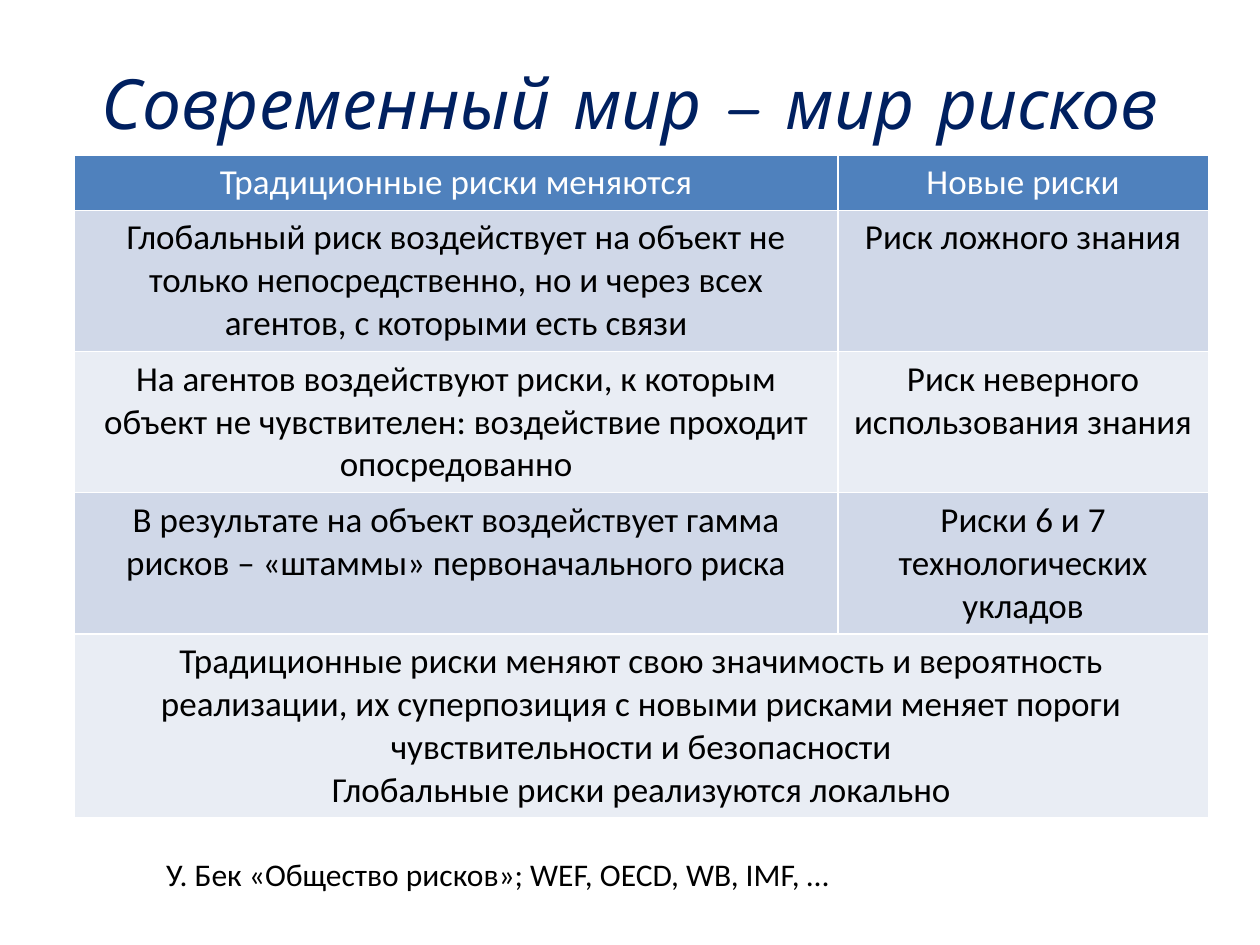
from pptx import Presentation
from pptx import util as u
from pptx.dml import color
from pptx.enum import text

NAVY = color.RGBColor(0x00, 0x20, 0x60)
BLUE = color.RGBColor(0x4F, 0x81, 0xBD)
DARK = color.RGBColor(0xD0, 0xD8, 0xE8)
PALE = color.RGBColor(0xE9, 0xED, 0xF4)
WHITE = color.RGBColor(0xFF, 0xFF, 0xFF)
BLACK = color.RGBColor(0x00, 0x00, 0x00)

TITLE = dict(name="Comic Neue", size=u.Pt(39.6), italic=True)
CELL = dict(name="Calibri", size=u.Pt(20), bold=False)
NOTE = dict(name="Calibri", size=u.Pt(18))

COLS = [15.39, 7.47]
ROWS = [1.07, 2.21, 2.21, 2.21, 2.9]
RISKS = [
    ["Традиционные риски меняются", "Новые риски"],
    ["Глобальный риск воздействует на объект не только непосредственно, "
     "но и через всех агентов, с которыми есть связи",
     "Риск ложного знания"],
    ["На агентов воздействуют риски, к которым объект не чувствителен: "
     "воздействие проходит опосредованно",
     "Риск неверного использования знания"],
    ["В результате на объект воздействует гамма рисков – "
     "«штаммы» первоначального риска",
     "Риски 6 и 7 технологических укладов"],
    ["Традиционные риски меняют свою значимость и вероятность реализации, "
     "их суперпозиция с новыми рисками меняет пороги чувствительности "
     "и безопасности\nГлобальные риски реализуются локально"],
]


class Deck:
    def __init__(self, wide, high):
        self.prs = Presentation()
        self.prs.slide_width, self.prs.slide_height = u.Cm(wide), u.Cm(high)
        self.slide = self.prs.slides.add_slide(self.prs.slide_layouts[5])

    def label(self, frame, words, form, ink, align):
        frame.text = words
        for para in frame.paragraphs:
            para.alignment = align
            for run in para.runs:
                for key, val in form.items():
                    setattr(run.font, key, val)
                run.font.color.rgb = ink

    def title(self, words, box):
        head = self.slide.shapes.title
        for key, val in zip(("left", "top", "width", "height"), box):
            setattr(head, key, u.Cm(val))
        head.text_frame.vertical_anchor = text.MSO_ANCHOR.MIDDLE
        self.label(head.text_frame, words, TITLE, NAVY, text.PP_ALIGN.CENTER)

    def table(self, data, cols, rows, box):
        """Fill a banded table; a row with one text spans all columns."""
        frame = self.slide.shapes.add_table(
            len(rows), len(cols), *map(u.Cm, box))
        grid = frame.table
        for col, wide in zip(grid.columns, cols):
            col.width = u.Cm(wide)
        for row, high in zip(grid.rows, rows):
            row.height = u.Cm(high)
        frame.height = u.Cm(box[3])
        for i, line in enumerate(data):
            fill = BLUE if i == 0 else DARK if i % 2 else PALE
            for cell in grid.rows[i].cells:
                cell.fill.solid()
                cell.fill.fore_color.rgb = fill
            if len(line) < len(cols):
                grid.cell(i, 0).merge(grid.cell(i, len(cols) - 1))
            for j, words in enumerate(line):
                self.label(grid.cell(i, j).text_frame, words, CELL,
                           BLACK if i else WHITE, text.PP_ALIGN.CENTER)

    def note(self, words, box):
        frame = self.slide.shapes.add_textbox(*map(u.Cm, box)).text_frame
        frame.word_wrap = False
        frame.auto_size = text.MSO_AUTO_SIZE.SHAPE_TO_FIT_TEXT
        self.label(frame, words, NOTE, BLACK, text.PP_ALIGN.LEFT)


def main():
    deck = Deck(25.4, 19.05)
    deck.title("Современный мир – мир рисков", (1.27, 0.76, 22.86, 2.57))
    deck.table(RISKS, COLS, ROWS, (1.5, 3.12, sum(COLS), 13.13))
    deck.note("У. Бек «Общество рисков»; WEF, OECD, WB, IMF, …",
              (3.1, 17.12, 14.02, 1.02))
    deck.prs.save("out.pptx")


if __name__ == "__main__":
    main()
